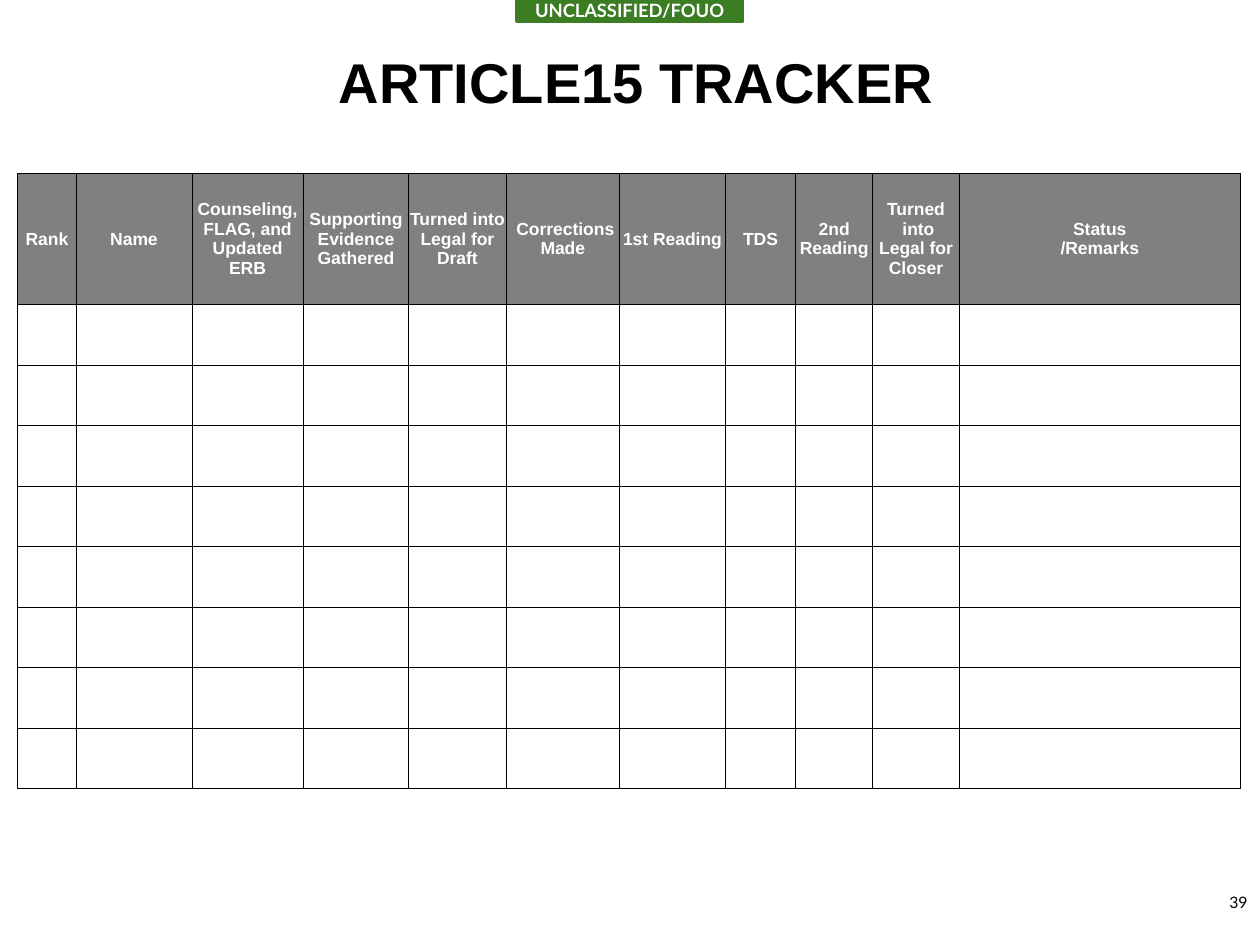
from dataclasses import dataclass

from lxml.etree import SubElement
from pptx import Presentation
from pptx.dml.color import RGBColor as RGB
from pptx.enum.shapes import MSO_SHAPE as Shape
from pptx.enum.text import MSO_ANCHOR as Anchor, MSO_AUTO_SIZE as AutoSize, PP_ALIGN as Align
from pptx.oxml.ns import qn
from pptx.util import Cm, Pt


@dataclass(frozen=True)
class Theme:
    black: RGB = RGB(0, 0, 0)
    white: RGB = RGB(255, 255, 255)
    green: RGB = RGB(0x3B, 0x7D, 0x23)
    gray: RGB = RGB(0x80, 0x80, 0x80)
    body_font: str = "Arial"
    frame_font: str = "Lato"
    title_size: float = 32
    header_size: float = 10
    banner_size: float = 10.5
    number_size: float = 9
    border: float = 0.5


@dataclass(frozen=True)
class Column:
    heading: str  # one paragraph per line
    width: float  # cm


THEME = Theme()
COLUMNS = [
    Column("Rank", 1.17),
    Column("Name", 2.34),
    Column("Counseling, FLAG, and Updated ERB", 2.24),
    Column("Supporting Evidence Gathered", 2.13),
    Column("Turned into Legal for Draft", 1.96),
    Column(" Corrections Made", 2.29),
    Column("1st Reading", 2.13),
    Column("TDS", 1.42),
    Column("2nd Reading", 1.55),
    Column("Turned\n into Legal for Closer", 1.75),
    Column("Status\n/Remarks", 5.66),
]
HEADER_HEIGHT, ROW_HEIGHT, BLANK_ROWS = 2.64, 1.22, 8


def write(tf, text: str, size: float, font: str, color: RGB,
          bold: bool = False, align: Align = Align.CENTER) -> None:
    """Fill a text frame with evenly styled paragraphs."""
    tf.text = text
    for p in tf.paragraphs:
        p.alignment = align
        p.font.size, p.font.name, p.font.bold = Pt(size), font, bold
        p.font.color.rgb = color


def set_borders(cell, color: RGB, width: float) -> None:
    tc_pr = cell._tc.get_or_add_tcPr()
    for side in ("lnL", "lnR", "lnT", "lnB"):
        ln = SubElement(tc_pr, qn(f"a:{side}"), w=str(Pt(width)))
        SubElement(SubElement(ln, qn("a:solidFill")), qn("a:srgbClr"), val=str(color))


def add_banner(slide) -> None:
    sp = slide.shapes.add_shape(Shape.RECTANGLE, Cm(10.41), 0, Cm(4.57), Cm(0.43))
    sp.shadow.inherit = False
    sp.fill.solid()
    sp.fill.fore_color.rgb = sp.line.color.rgb = THEME.green
    sp.line.width = Pt(1.5)
    tf = sp.text_frame
    tf.margin_top = tf.margin_bottom = 0
    tf.vertical_anchor = Anchor.MIDDLE
    write(tf, "UNCLASSIFIED/FOUO", THEME.banner_size, THEME.frame_font, THEME.white, True)


def add_title(slide) -> None:
    title = slide.shapes.title
    title.left, title.top, title.width, title.height = Cm(6.53), Cm(0.84), Cm(12.6), Cm(1.63)
    tf = title.text_frame
    tf.word_wrap = False
    tf.auto_size = AutoSize.SHAPE_TO_FIT_TEXT
    tf.vertical_anchor = Anchor.TOP
    write(tf, "ARTICLE15 TRACKER", THEME.title_size, THEME.body_font, THEME.black, True)


def add_tracker(slide) -> None:
    width = sum(c.width for c in COLUMNS)
    height = HEADER_HEIGHT + BLANK_ROWS * ROW_HEIGHT
    table = slide.shapes.add_table(BLANK_ROWS + 1, len(COLUMNS), Cm(0.36), Cm(3.5),
                                   Cm(width), Cm(height)).table
    for column, spec in zip(table.columns, COLUMNS):
        column.width = Cm(spec.width)
    for i, row in enumerate(table.rows):
        row.height = Cm(ROW_HEIGHT if i else HEADER_HEIGHT)
        for cell, spec in zip(row.cells, COLUMNS):
            set_borders(cell, THEME.black, THEME.border)
            if i:
                cell.fill.background()
                continue
            cell.fill.solid()
            cell.fill.fore_color.rgb = THEME.gray
            cell.margin_left = cell.margin_right = cell.margin_top = cell.margin_bottom = 0
            cell.vertical_anchor = Anchor.MIDDLE
            write(cell.text_frame, spec.heading, THEME.header_size, THEME.body_font,
                  THEME.white, True)


def add_page_number(slide) -> None:
    tf = slide.shapes.add_textbox(Cm(19.69), Cm(17.68), Cm(5.71), Cm(1.02)).text_frame
    tf.word_wrap = True
    tf.vertical_anchor = Anchor.MIDDLE
    write(tf, "39", THEME.number_size, THEME.frame_font, THEME.black, align=Align.RIGHT)


def main() -> None:
    prs = Presentation()
    prs.slide_width, prs.slide_height = Cm(25.4), Cm(19.05)
    slide = prs.slides.add_slide(prs.slide_layouts[5])  # title only

    # Page frame
    add_banner(slide)
    add_page_number(slide)

    # Content
    add_title(slide)
    add_tracker(slide)

    prs.save("out.pptx")


if __name__ == "__main__":
    main()
